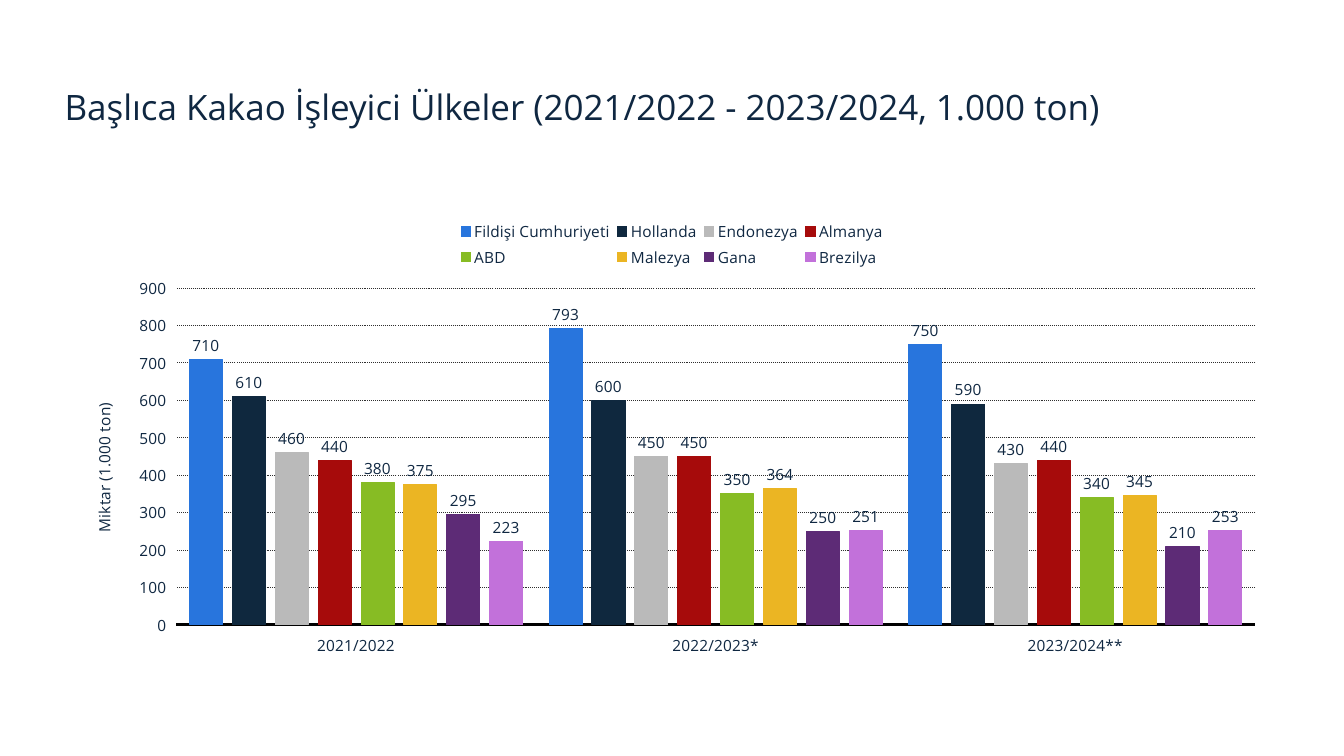
from dataclasses import dataclass

from lxml import etree
from pptx import Presentation
from pptx import util as u
from pptx.chart import data as chart_data
from pptx.dml import color
from pptx.enum import chart as ch, dml, text
from pptx.oxml import ns


@dataclass(frozen=True)
class Theme:
    font: str = "Open Sans"
    ink: str = "0F2741"
    grid: str = "2F2F2F"
    baseline: str = "000000"
    title_size: int = 25
    chart_size: int = 11


THEME = Theme()
SEASONS = ["2021/2022", "2022/2023*", "2023/2024**"]
COUNTRIES = [
    ("Fildişi Cumhuriyeti", "2875DD", (710, 793, 750)),
    ("Hollanda", "0F283E", (610, 600, 590)),
    ("Endonezya", "BABABA", (460, 450, 430)),
    ("Almanya", "A60B0B", (440, 450, 440)),
    ("ABD", "87BC24", (380, 350, 340)),
    ("Malezya", "EBB523", (375, 364, 345)),
    ("Gana", "5D2B76", (295, 250, 210)),
    ("Brezilya", "C271DA", (223, 251, 253)),
]


def rgb(value):
    return color.RGBColor.from_string(value)


def style_font(font, size, tint=THEME.ink, bold=False):
    font.name = THEME.font
    font.size = u.Pt(size)
    font.bold = bold
    font.color.rgb = rgb(tint)


def write(frame, wording, **style):
    paragraph = frame.paragraphs[0]
    run = paragraph.add_run()
    run.text = wording
    style_font(run.font, **style)
    return paragraph


def set_line(line, tint, width):
    line.color.rgb = rgb(tint)
    line.width = u.Pt(width)


def set_layout(element, index, **fractions):
    for previous in element.findall(ns.qn("c:layout")):
        element.remove(previous)
    layout = etree.Element(ns.qn("c:layout"))
    manual = etree.SubElement(layout, ns.qn("c:manualLayout"))
    if "plotArea" in element.tag:
        etree.SubElement(manual, ns.qn("c:layoutTarget"), val="inner")
    for edge in ("x", "y"):
        etree.SubElement(manual, ns.qn(f"c:{edge}Mode"), val="edge")
    for key, fraction in fractions.items():
        etree.SubElement(manual, ns.qn(f"c:{key}"), val=str(fraction))
    element.insert(index, layout)


def add_heading(slide, wording, left, top, width, height):
    title = slide.shapes.title
    title.left, title.top, title.width, title.height = map(
        u.Inches, (left, top, width, height))
    frame = title.text_frame
    frame.word_wrap = True
    frame.auto_size = text.MSO_AUTO_SIZE.NONE
    frame.vertical_anchor = text.MSO_ANCHOR.BOTTOM
    paragraph = write(frame, wording, size=THEME.title_size)
    paragraph.alignment = text.PP_ALIGN.LEFT


def format_axes(chart):
    seasons, amounts = chart.category_axis, chart.value_axis
    for axis in (seasons, amounts):
        axis.major_tick_mark = ch.XL_TICK_MARK.NONE
        axis.minor_tick_mark = ch.XL_TICK_MARK.NONE
        axis.tick_label_position = ch.XL_TICK_LABEL_POSITION.LOW
        style_font(axis.tick_labels.font, THEME.chart_size)
    set_line(seasons.format.line, THEME.baseline, 2)

    amounts.minimum_scale, amounts.maximum_scale = 0, 900
    amounts.major_unit = 100
    amounts.tick_labels.number_format = "#,##0"
    amounts.tick_labels.number_format_is_linked = False
    amounts.format.line.fill.background()
    amounts.has_major_gridlines = True
    grid = amounts.major_gridlines.format.line
    set_line(grid, THEME.grid, 0.75)
    grid.dash_style = dml.MSO_LINE.ROUND_DOT
    write(amounts.axis_title.text_frame, "Miktar (1.000 ton)",
          size=THEME.chart_size)
    set_layout(amounts.axis_title._element, 1, x=0.02, y=0.42)


def format_series(plot):
    plot.gap_width = 80
    plot.overlap = -30
    plot.vary_by_categories = False
    for series, (_, tint, _) in zip(plot.series, COUNTRIES):
        series.format.fill.solid()
        series.format.fill.fore_color.rgb = rgb(tint)
        set_line(series.format.line, tint, 0.75)
        labels = series.data_labels
        labels.show_value = True
        labels.position = ch.XL_LABEL_POSITION.OUTSIDE_END
        style_font(labels.font, THEME.chart_size)


def add_processing_chart(slide, left, top, width, height):
    processing = chart_data.CategoryChartData()
    processing.categories = SEASONS
    for country, _, amounts in COUNTRIES:
        processing.add_series(country, amounts)
    chart = slide.shapes.add_chart(
        ch.XL_CHART_TYPE.COLUMN_CLUSTERED,
        *map(u.Inches, (left, top, width, height)), processing).chart
    chart.has_title = False
    style_font(chart.font, THEME.chart_size)
    format_axes(chart)
    format_series(chart.plots[0])

    chart.has_legend = True
    legend = chart.legend
    legend.position = ch.XL_LEGEND_POSITION.TOP
    legend.include_in_layout = False
    style_font(legend.font, THEME.chart_size)
    set_layout(legend._element, 1, x=0.32, y=0.02, w=0.36, h=0.12)
    plot_area = chart._chartSpace.find(f".//{ns.qn('c:plotArea')}")
    set_layout(plot_area, 0, x=0.092, y=0.176, w=0.888, h=0.736)


def main():
    deck = Presentation()
    deck.slide_width, deck.slide_height = u.Inches(13.33), u.Inches(7.5)
    slide = deck.slides.add_slide(deck.slide_layouts[5])
    add_heading(
        slide,
        "Başlıca Kakao İşleyici Ülkeler (2021/2022 - 2023/2024, 1.000 ton)",
        0.54, 0.46, 12.24, 0.86)
    add_processing_chart(slide, 0.64, 2.06, 12.05, 4.54)
    deck.save("out.pptx")


if __name__ == "__main__":
    main()
